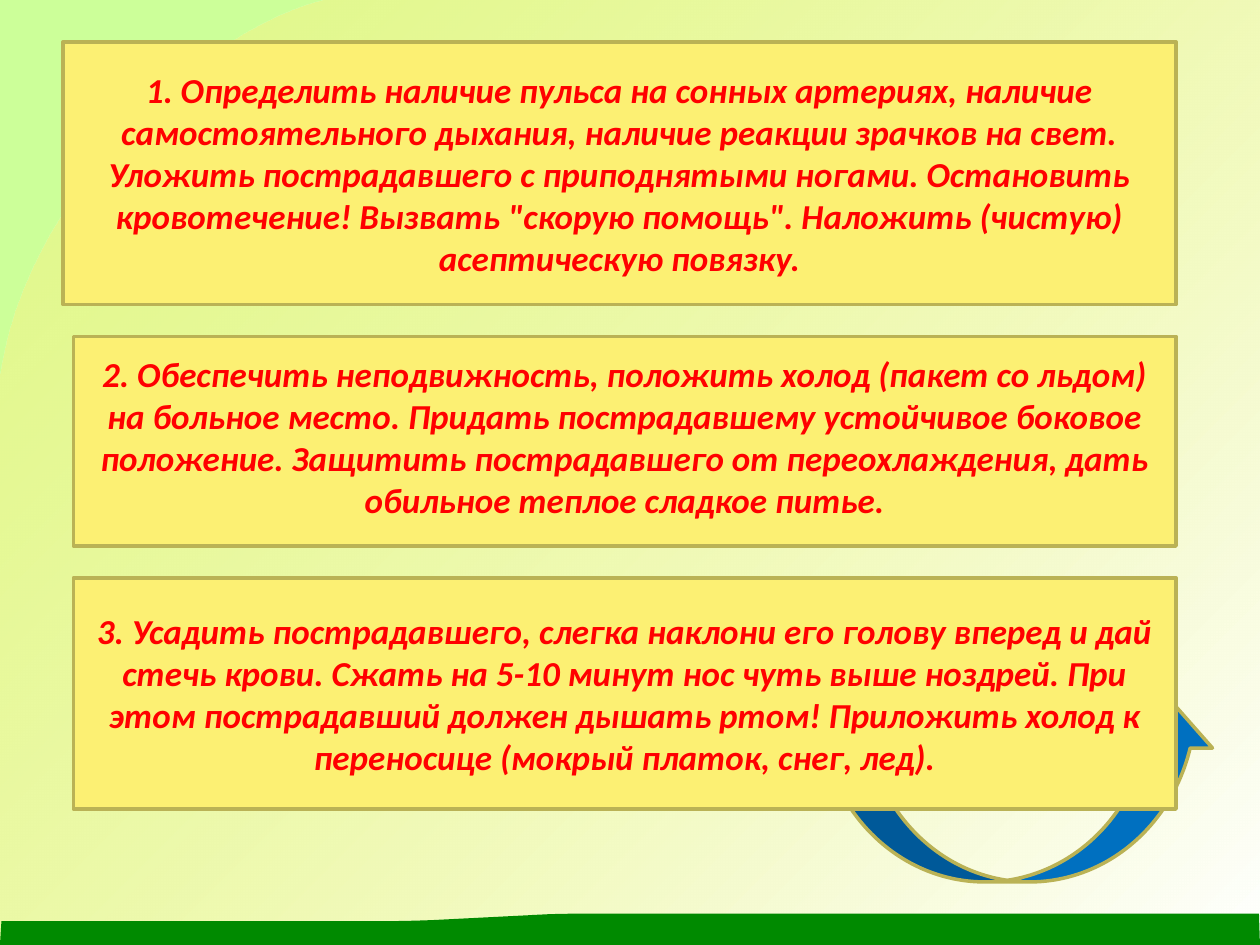
import lxml.etree
import pptx
import pptx.dml.color
import pptx.enum.shapes
import pptx.enum.text
import pptx.oxml.ns
import pptx.util

Cm = pptx.util.Cm
WIDE, HIGH = 25.4, 19.05
GOLD, SAND = "FCF073", "BAB255"
STEPS = [
    (1.27, 5.29, 0.13,
     "1. Определить наличие пульса на сонных артериях, наличие "
     "самостоятельного дыхания, наличие реакции зрачков на свет. "
     "Уложить пострадавшего с приподнятыми ногами. Остановить "
     "кровотечение! Вызвать \"скорую помощь\". Наложить (чистую) "
     "асептическую повязку."),
    (1.48, 4.23, 0.3,
     "2. Обеспечить неподвижность, положить холод (пакет со льдом) "
     "на больное место. Придать пострадавшему устойчивое боковое "
     "положение. Защитить пострадавшего от переохлаждения, дать "
     "обильное теплое сладкое питье."),
    (1.48, 4.66, 0.13,
     "3. Усадить пострадавшего, слегка наклони его голову вперед и дай "
     "стечь крови. Сжать на 5-10 минут нос чуть выше ноздрей. При "
     "этом пострадавший должен дышать ртом! Приложить холод к "
     "переносице (мокрый платок, снег, лед)."),
]


def paint(fill, tint):
    """Give a fill one solid colour from a hex string."""
    fill.solid()
    fill.fore_color.rgb = pptx.dml.color.RGBColor.from_string(tint)


def trace(start, parts, count=16):
    """Turn line ends (x, y) and Bezier parts (six numbers) into points."""
    spots = [start]
    for part in parts:
        if len(part) == 2:
            spots.append(part)
            continue
        x, y = spots[-1]
        a, b, c, d, e, f = part
        for n in range(1, count + 1):
            t = n / count
            u = 1 - t
            spots.append((
                u**3 * x + 3 * u * u * t * a + 3 * u * t * t * c + t**3 * e,
                u**3 * y + 3 * u * u * t * b + 3 * u * t * t * d + t**3 * f))
    return spots


def outline(slide, left, top, start, parts):
    """Draw a closed, unlined shape relative to a corner."""
    spots = [(Cm(left + x), Cm(top + y)) for x, y in trace(start, parts)]
    build = slide.shapes.build_freeform(*spots[0])
    build.add_line_segments(spots[1:], close=True)
    shape = build.convert_to_shape()
    shape.shadow.inherit = False
    shape.line.fill.background()
    return shape


def add_glow(slide, left, top, wide, high):
    """Draw the pale curved field with its diagonal gradient."""
    shape = outline(slide, left, top, (6.55, 0), [
        (4.83, 0.41, 2.95, 2.11, 2.49, 2.72),
        (2.03, 3.35, 0.41, 4.93, 0, 7.65),
        (0, high), (wide, high), (wide, 0)])
    shape.fill.gradient()
    shape.fill.gradient_angle = 315
    for stop, place, tint in zip(shape.fill.gradient_stops, (0, 1), (GOLD, "FFFFFF")):
        stop.position = place
        stop.color.rgb = pptx.dml.color.RGBColor.from_string(tint)
    first = shape.element.spPr.xpath(".//a:gs/a:srgbClr")[0]
    lxml.etree.SubElement(first, pptx.oxml.ns.qn("a:alpha"), val="39000")


def add_grass(slide, left, top, wide, high):
    """Draw the green strip along the foot of the slide."""
    shape = outline(slide, left, top, (wide - 0.02, 0), [
        (12.01, 0), (11.38, 0, 11.2, 0, 10.67, 0.03),
        (8.69, 0.13), (8.13, 0.15, 8.03, 0.15, 7.26, 0.15),
        (0.03, 0.15), (0, high), (wide, high)])
    paint(shape.fill, "008A00")


def add_form(slide, kind, box, tint):
    """Add a preset shape with the sand-coloured border."""
    shape = slide.shapes.add_shape(kind, *map(Cm, box))
    shape.shadow.inherit = False
    paint(shape.fill, tint)
    paint(shape.line.fill, SAND)
    shape.line.width = pptx.util.Pt(2)
    return shape


def add_step(slide, box, foot, text):
    """Add one first-aid step with its red centred text."""
    shape = add_form(slide, pptx.enum.shapes.MSO_SHAPE.RECTANGLE, box, GOLD)
    frame = shape.text_frame
    frame.word_wrap = True
    frame.vertical_anchor = pptx.enum.text.MSO_ANCHOR.MIDDLE
    frame.margin_bottom = Cm(foot)
    frame.text = text
    para = frame.paragraphs[0]
    para.alignment = pptx.enum.text.PP_ALIGN.CENTER
    font = para.runs[0].font
    font.name, font.size = "Calibri", pptx.util.Pt(20)
    font.bold = font.italic = True
    paint(font.fill, "FF0000")


def add_steps(slide, top, right, gap):
    """Stack the steps downwards, flush at the right edge."""
    for left, high, foot, text in STEPS:
        add_step(slide, (left, top, right - left, high), foot, text)
        top += high + gap


def main():
    """Build and save the slide."""
    deck = pptx.Presentation()
    deck.slide_width, deck.slide_height = Cm(WIDE), Cm(HIGH)
    slide = deck.slides.add_slide(deck.slide_layouts[6])
    paint(slide.background.fill, "CCFF99")
    add_glow(slide, 0, 0, WIDE, HIGH)
    add_grass(slide, 0, 18.42, WIDE, 0.63)
    add_form(slide, pptx.enum.shapes.MSO_SHAPE.CURVED_UP_ARROW,
             (16.51, 14.18, 8.04, 3.6), "0070C0")
    add_steps(slide, 0.85, 23.71, 0.64)
    deck.save("out.pptx")


if __name__ == "__main__":
    main()
